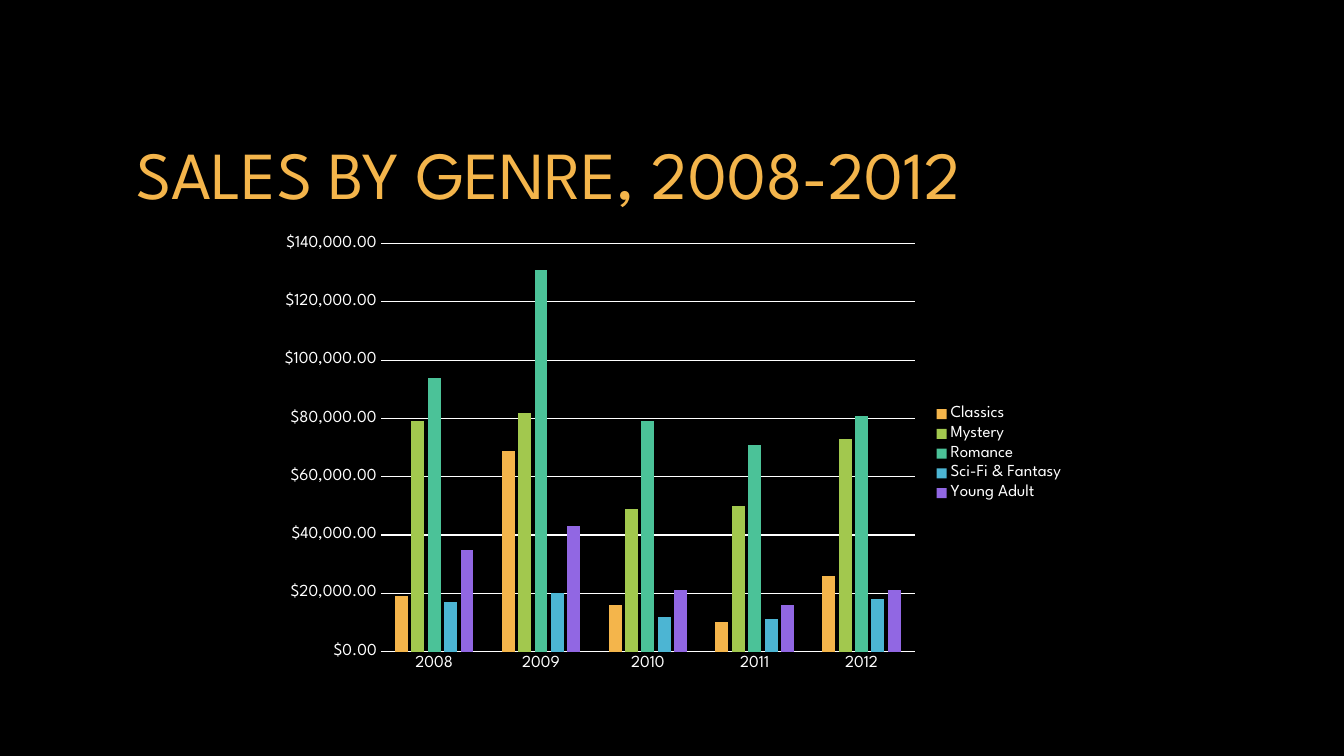
from pptx import Presentation
from pptx.chart.data import CategoryChartData
from pptx.dml.color import RGBColor
from pptx.enum.chart import XL_CHART_TYPE, XL_LEGEND_POSITION, XL_TICK_MARK
from pptx.enum.text import MSO_ANCHOR, MSO_AUTO_SIZE, PP_ALIGN
from pptx.util import Pt

FACE = "League Spartan"
BLACK = RGBColor(0x00, 0x00, 0x00)
WHITE = RGBColor(0xFF, 0xFF, 0xFF)
GOLD = RGBColor(0xF4, 0xB5, 0x4B)
LIME = RGBColor(0xA2, 0xC8, 0x4E)
GREEN = RGBColor(0x4B, 0xC2, 0x98)
BLUE = RGBColor(0x4C, 0xB5, 0xD3)
PURPLE = RGBColor(0x91, 0x67, 0xE3)

YEARS = ["2008", "2009", "2010", "2011", "2012"]
SALES = [
    ("Classics", GOLD, (19000, 69000, 16000, 10000, 26000)),
    ("Mystery", LIME, (79000, 82000, 49000, 50000, 73000)),
    ("Romance", GREEN, (94000, 131000, 79000, 71000, 81000)),
    ("Sci-Fi & Fantasy", BLUE, (17000, 20000, 12000, 11000, 18000)),
    ("Young Adult", PURPLE, (35000, 43000, 21000, 16000, 21000)),
]


def apply(item, values):
    for name, value in values.items():
        setattr(item, name, value)


def style(font, size, color):
    apply(font, {"name": FACE, "size": Pt(size), "bold": False})
    font.color.rgb = color


def rule(line):
    line.color.rgb = WHITE
    line.width = Pt(0.75)


def add_title(slide, box, text):
    title = slide.shapes.title
    apply(title, dict(zip(("left", "top", "width", "height"), map(Pt, box))))
    frame = title.text_frame
    frame.text = text
    apply(frame, {"vertical_anchor": MSO_ANCHOR.MIDDLE, "word_wrap": True,
                  "auto_size": MSO_AUTO_SIZE.NONE})
    para = frame.paragraphs[0]
    para.alignment = PP_ALIGN.LEFT
    style(para.runs[0].font, 48, GOLD)


def add_sales(slide, box):
    data = CategoryChartData()
    data.categories = YEARS
    for name, _, values in SALES:
        data.add_series(name, values)
    chart = slide.shapes.add_chart(
        XL_CHART_TYPE.COLUMN_CLUSTERED, *map(Pt, box), data).chart
    chart.has_title = False
    style(chart.font, 10, WHITE)

    # Columns
    plot = chart.plots[0]
    apply(plot, {"gap_width": 219, "overlap": -27, "vary_by_categories": False})
    for series, (_, color, _) in zip(plot.series, SALES):
        series.format.fill.solid()
        series.format.fill.fore_color.rgb = color
        series.invert_if_negative = False

    # Axes
    years, money = chart.category_axis, chart.value_axis
    for axis in (years, money):
        apply(axis, {"major_tick_mark": XL_TICK_MARK.NONE,
                     "minor_tick_mark": XL_TICK_MARK.NONE})
        style(axis.tick_labels.font, 12, WHITE)
    rule(years.format.line)
    money.format.line.fill.background()
    apply(money, {"minimum_scale": 0, "maximum_scale": 140000,
                  "major_unit": 20000, "has_major_gridlines": True})
    rule(money.major_gridlines.format.line)
    apply(money.tick_labels, {"number_format": '"$"#,##0.00',
                              "number_format_is_linked": False})

    # Legend
    chart.has_legend = True
    apply(chart.legend, {"position": XL_LEGEND_POSITION.RIGHT,
                         "include_in_layout": False})
    style(chart.legend.font, 12, WHITE)


def main():
    deck = Presentation()
    apply(deck, {"slide_width": Pt(960), "slide_height": Pt(540)})
    slide = deck.slides.add_slide(deck.slide_layouts[5])
    slide.background.fill.solid()
    slide.background.fill.fore_color.rgb = BLACK
    add_sales(slide, (192, 162, 576, 324))
    add_title(slide, (90, 48, 780, 150), "SALES BY GENRE, 2008-2012")
    deck.save("out.pptx")


if __name__ == "__main__":
    main()
